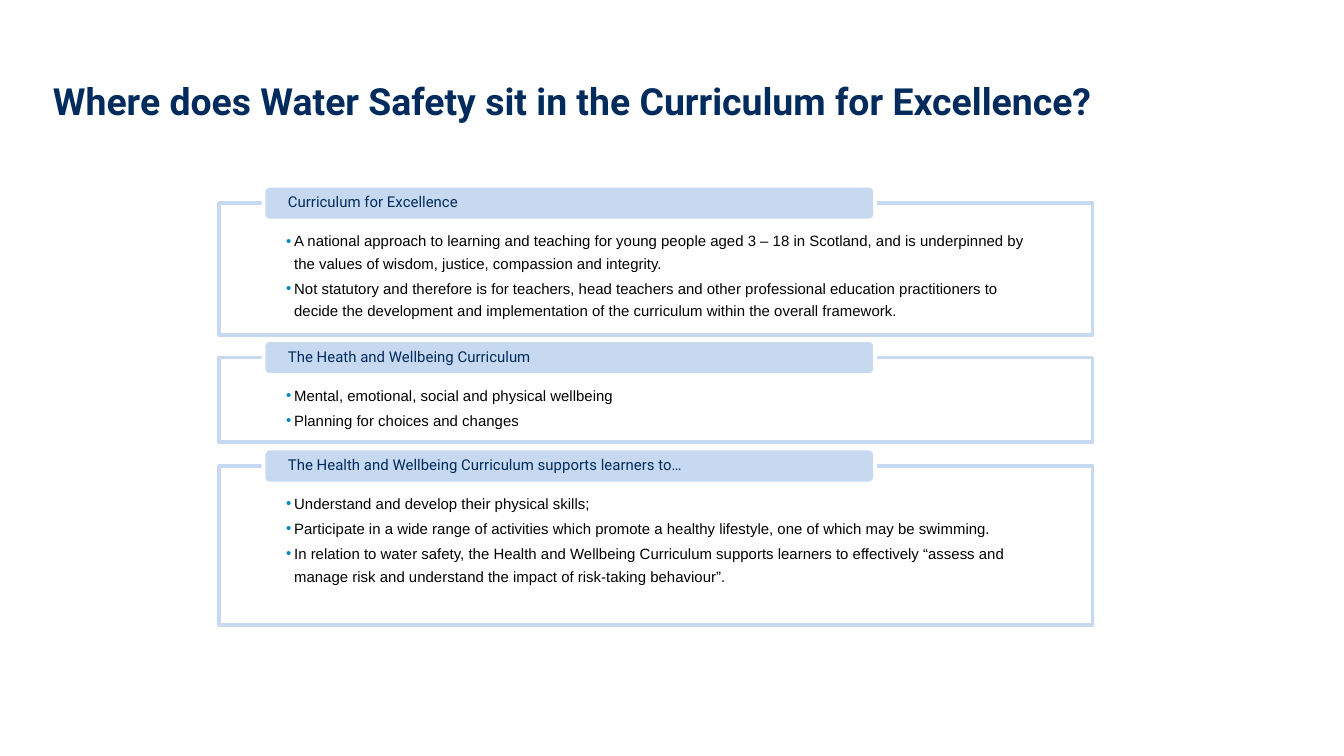
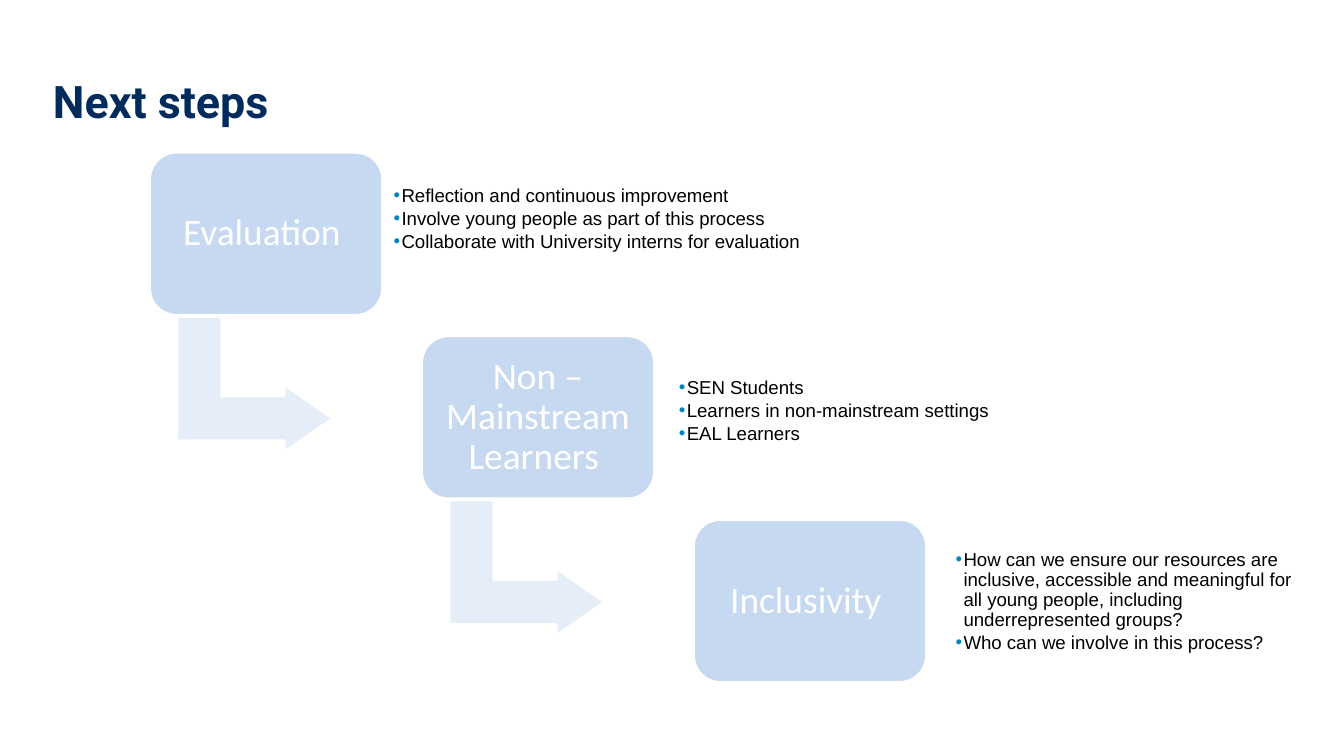
from lxml import etree
from pptx import Presentation
from pptx.dml.color import RGBColor
from pptx.enum.shapes import MSO_SHAPE
from pptx.enum.text import MSO_ANCHOR, PP_ALIGN
from pptx.oxml.ns import qn
from pptx.util import Cm, Pt

RECT = MSO_SHAPE.RECTANGLE
ROUND = MSO_SHAPE.ROUNDED_RECTANGLE
BENT = MSO_SHAPE.BENT_UP_ARROW
TOP, MIDDLE = MSO_ANCHOR.TOP, MSO_ANCHOR.MIDDLE
LEFT, CENTER = PP_ALIGN.LEFT, PP_ALIGN.CENTER

COLORS = {
    "navy": "002B5C",
    "sky": "C6D9F0",
    "pale": "E5EDF8",
    "dot": "0086BE",
    "white": "FFFFFF",
    "black": "000000",
}

# Font formats: name, size and weight are set in a loop, colour by key
FONTS = {
    "title": ("navy", {"name": "Roboto", "bold": True}),
    "tab": ("navy", {"name": "Roboto", "size": Pt(8)}),
    "panel": ("black", {"name": "Arial", "size": Pt(8)}),
    "step": ("white", {"name": "Calibri", "size": Pt(20)}),
    "note": ("black", {"name": "Arial", "size": Pt(10)}),
}

# Top, height, heading and points of each panel, in cm
PANELS = [
    (3.84, 2.49, "Curriculum for Excellence", [
        "A national approach to learning and teaching for young people aged "
        "3 – 18 in Scotland, and is underpinned by the values of wisdom, "
        "justice, compassion and integrity.",
        "Not statutory and therefore is for teachers, head teachers and other "
        "professional education practitioners to decide the development and "
        "implementation of the curriculum within the overall framework.",
    ]),
    (6.76, 1.6, "The Heath and Wellbeing Curriculum", [
        "Mental, emotional, social and physical wellbeing",
        "Planning for choices and changes",
    ]),
    (8.81, 3, "The Health and Wellbeing Curriculum supports learners to…", [
        "Understand and develop their physical skills;",
        "Participate in a wide range of activities which promote a healthy "
        "lifestyle, one of which may be swimming.",
        "In relation to water safety, the Health and Wellbeing Curriculum "
        "supports learners to effectively “assess and manage risk and "
        "understand the impact of risk-taking behaviour”.",
    ]),
]

# Label, box of the note (left, top, width, height in cm) and its points
STEPS = [
    ("Evaluation ", (7.34, 2.9, 9.37, 2.49), [
        "Reflection and continuous improvement",
        "Involve young people as part of this process",
        "Collaborate with University interns for evaluation",
    ]),
    ("Non –Mainstream Learners ", (12.73, 6.53, 8.41, 2.49), [
        "SEN Students",
        "Learners in non-mainstream settings",
        "EAL Learners",
    ]),
    ("Inclusivity ", (17.96, 10.03, 6.93, 2.69), [
        "How can we ensure our resources are inclusive, accessible and "
        "meaningful for all young people, including underrepresented groups?",
        "Who can we involve in this process?",
    ]),
]


def rgb(key):
    return RGBColor.from_string(COLORS[key])


def apply(item, values):
    for name, value in values.items():
        setattr(item, name, value)


def box(*sizes):
    return [Cm(size) for size in sizes]


def set_frame(frame, anchor, pads):
    """Set wrap, anchor and insets (left, top, right, bottom in cm)."""
    sides = ("margin_left", "margin_top", "margin_right", "margin_bottom")
    apply(frame, dict(zip(sides, box(*pads))))
    apply(frame, {"word_wrap": True, "vertical_anchor": anchor})


def add_dot(para):
    props = para._p.get_or_add_pPr()
    props.set("marL", str(Cm(0.15)))
    props.set("indent", str(-Cm(0.15)))
    color = etree.SubElement(props, qn("a:buClr"))
    etree.SubElement(color, qn("a:srgbClr")).set("val", COLORS["dot"])
    etree.SubElement(props, qn("a:buFont")).set("typeface", "Arial")
    etree.SubElement(props, qn("a:buChar")).set("char", "•")


def write(frame, lines, style, align=LEFT, space=0.9, dots=False):
    color, font = FONTS[style]
    for i, line in enumerate(lines):
        para = frame.add_paragraph() if i else frame.paragraphs[0]
        if dots:
            add_dot(para)
        apply(para, {"alignment": align, "line_spacing": space,
                     "space_before": Pt(0),
                     "space_after": Pt(1.4 if dots else 0)})
        run = para.add_run()
        run.text = line
        apply(run.font, font)
        run.font.color.rgb = rgb(color)


def add_block(slide, kind, place, fill, line="white"):
    shape = slide.shapes.add_shape(kind, *box(*place))
    shape.shadow.inherit = False
    shape.fill.solid()
    shape.fill.fore_color.rgb = rgb(fill)
    shape.line.color.rgb = rgb(line)
    shape.line.width = Pt(2)
    return shape


def add_slide(deck, text, size, width):
    slide = deck.slides.add_slide(deck.slide_layouts[5])
    title = slide.shapes.title
    sides = ("left", "top", "width", "height")
    apply(title, dict(zip(sides, box(1, 1, width, 1.8))))
    set_frame(title.text_frame, MIDDLE, (0, 0, 0, 0))
    write(title.text_frame, [text], "title", space=1.0)
    title.text_frame.paragraphs[0].runs[0].font.size = Pt(size)
    return slide


def add_panel(slide, top, height, head, points):
    """Draw a framed list with a heading tab across its top edge."""
    panel = add_block(slide, RECT, (4.14, top, 16.51, height), "white", "sky")
    set_frame(panel.text_frame, TOP, (1.27, 0.46, 1.27, 0.15))
    write(panel.text_frame, points, "panel", space=Pt(12), dots=True)
    tab = add_block(slide, ROUND, (4.98, top - 0.33, 11.56, 0.66), "sky")
    set_frame(tab.text_frame, MIDDLE, (0.43, 0, 0.43, 0))
    write(tab.text_frame, [head], "tab")


def add_arrow(slide, left, top):
    arrow = add_block(slide, BENT, (left, top, 2.62, 2.97), "pale")
    arrow.rotation = 90
    for i, value in enumerate((0.33, 0.25, 0.36)):
        arrow.adjustments[i] = value


def add_step(slide, left, top, label):
    step = add_block(slide, ROUND, (left, top, 4.42, 3.1), "sky")
    set_frame(step.text_frame, MIDDLE, (0.2, 0.2, 0.2, 0.2))
    write(step.text_frame, [label], "step", CENTER)


def add_note(slide, place, points):
    frame = slide.shapes.add_textbox(*box(*place)).text_frame
    set_frame(frame, MIDDLE, (0.1, 0.1, 0.1, 0.1))
    write(frame, points, "note", dots=True)


def main():
    deck = Presentation()
    apply(deck, {"slide_width": Cm(25.4), "slide_height": Cm(14.29)})

    slide = add_slide(
        deck, "Where does Water Safety sit in the Curriculum for Excellence?",
        20, 22.7)
    for panel in PANELS:
        add_panel(slide, *panel)

    slide = add_slide(deck, "Next steps", 24, 12.9)
    for i, (label, place, points) in enumerate(STEPS):
        left, top = 2.82 + 5.14 * i, 2.87 + 3.47 * i
        if i < len(STEPS) - 1:
            add_arrow(slide, left + 0.69, top + 2.9)
        add_step(slide, left, top, label)
        add_note(slide, place, points)

    deck.save("out.pptx")


if __name__ == "__main__":
    main()
